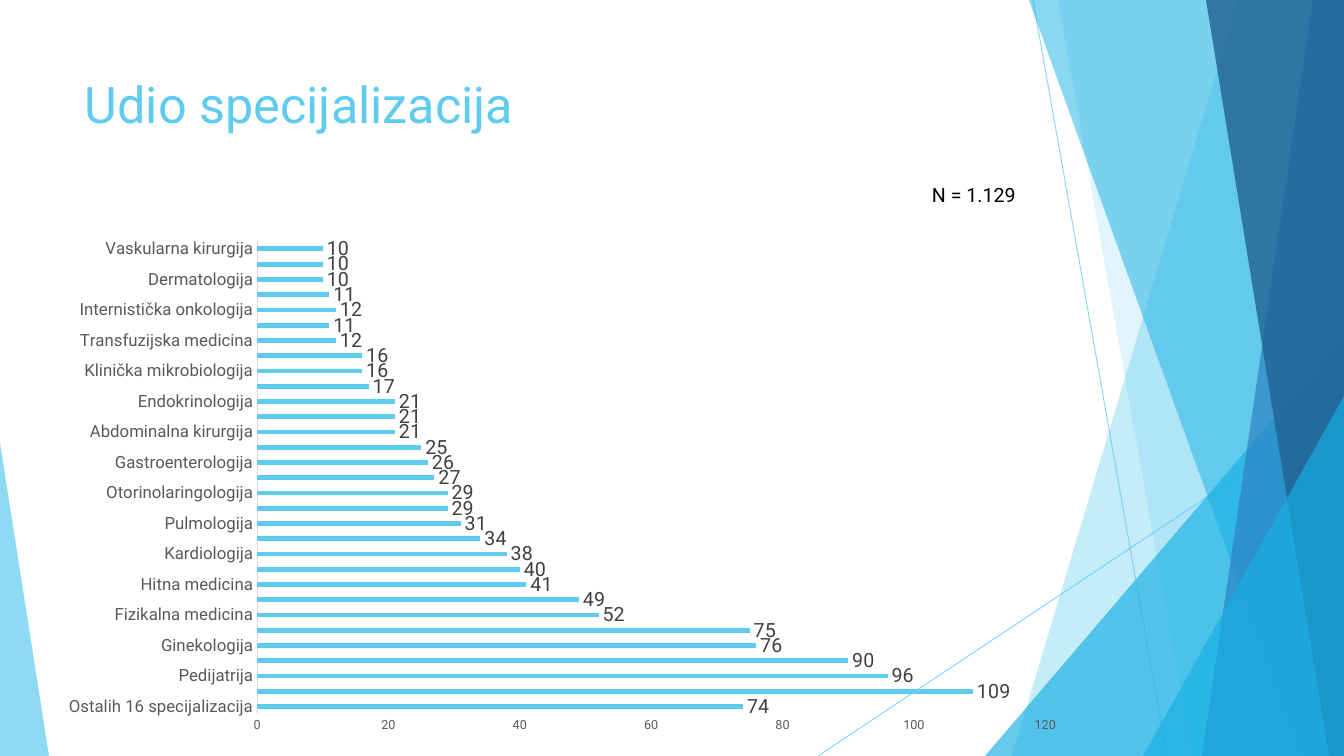
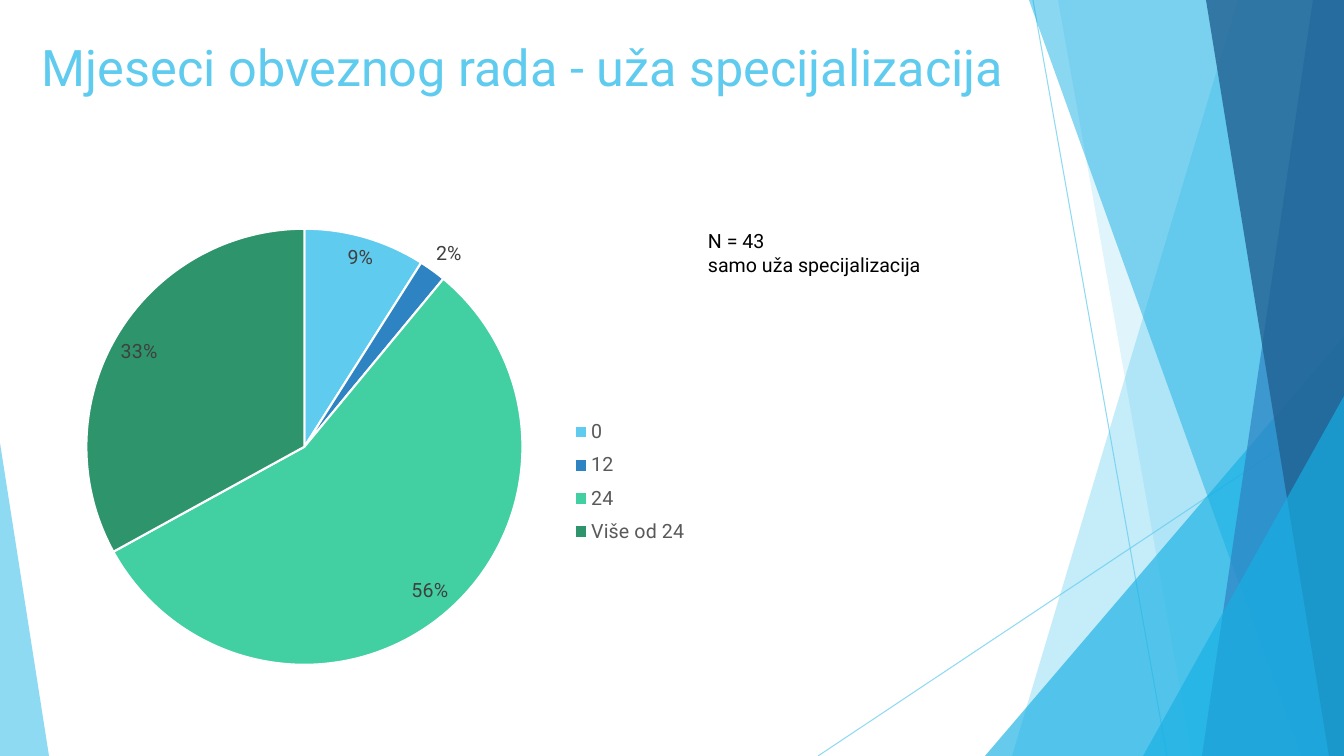
from dataclasses import dataclass
from typing import NamedTuple

from lxml.etree import SubElement
from pptx import Presentation
from pptx.chart.data import CategoryChartData
from pptx.dml.color import RGBColor
from pptx.enum.chart import XL_CHART_TYPE as ChartType
from pptx.enum.chart import XL_LABEL_POSITION as LabelPosition
from pptx.enum.chart import XL_LEGEND_POSITION as LegendPosition
from pptx.enum.chart import XL_TICK_MARK as TickMark
from pptx.enum.shapes import MSO_CONNECTOR as Connector
from pptx.enum.shapes import MSO_SHAPE as Preset
from pptx.enum.text import MSO_AUTO_SIZE as AutoSize
from pptx.oxml.ns import qn
from pptx.util import Emu, Pt


@dataclass(frozen=True)
class Theme:
    font: str = "Roboto"
    sky: str = "5FCBEF"
    cyan: str = "17B0E4"
    blue: str = "2E83C3"
    navy: str = "226292"
    mint: str = "42D0A2"
    green: str = "2E946B"
    white: str = "FFFFFF"
    black: str = "000000"
    label: str = "404040"
    axis: str = "595959"
    axis_line: str = "D9D9D9"
    title_size: int = 36
    body_size: int = 14
    category_size: int = 12
    chart_size: int = 10
    value_size: int = 9


class Box(NamedTuple):
    left: int
    top: int
    width: int
    height: int


THEME = Theme()
SLIDE_BOX = Box(0, 0, 1344, 756)

SPECIALTIES = [
    ("Ostalih 16 specijalizacija", 74), ("Anesteziologija", 109),
    ("Pedijatrija", 96), ("Radiologija", 90), ("Ginekologija", 76),
    ("Obiteljska medicina", 75), ("Fizikalna medicina", 52),
    ("Psihijatrija", 49), ("Hitna medicina", 41), ("Neurologija", 40),
    ("Kardiologija", 38), ("Interna medicina", 34), ("Pulmologija", 31),
    ("Ortopedija", 29), ("Otorinolaringologija", 29),
    ("Patologija i citologija", 27), ("Gastroenterologija", 26),
    ("Oftalmologija", 25), ("Abdominalna kirurgija", 21),
    ("Infektologija", 21), ("Endokrinologija", 21),
    ("Medicina rada i športa", 17), ("Klinička mikrobiologija", 16),
    ("Opća kirurgija", 16), ("Transfuzijska medicina", 12),
    ("Dječja kirurgija", 11), ("Internistička onkologija", 12),
    ("Urologija", 11), ("Dermatologija", 10), ("Nefrologija", 10),
    ("Vaskularna kirurgija", 10),
]
WORK_MONTHS = [
    ("0", 9, THEME.sky), ("12", 2, THEME.blue),
    ("24", 56, THEME.mint), ("Više od 24", 33, THEME.green),
]


def px(length):
    return Emu(round(length * 63500 / 7))


def emu_box(box):
    return [px(length) for length in box]


def rgb(color):
    return RGBColor.from_string(color)


def set_font(font, size, color):
    font.name = THEME.font
    font.size = Pt(size)
    font.color.rgb = rgb(color)


def set_opacity(shape, percent):
    for color in shape.element.spPr.iter(qn("a:srgbClr")):
        SubElement(color, qn("a:alpha"), val=str(percent * 1000))


def paint(shape, color, opacity):
    """Give a borderless, translucent fill."""
    shape.shadow.inherit = False
    shape.fill.solid()
    shape.fill.fore_color.rgb = rgb(color)
    shape.line.fill.background()
    set_opacity(shape, opacity)


def add_ray(slide, box, start, end):
    points = [px(length) for x, y in (start, end)
              for length in (box.left + x, box.top + y)]
    ray = slide.shapes.add_connector(Connector.STRAIGHT, *points)
    ray.line.color.rgb = rgb(THEME.sky)
    ray.line.width = Pt(0.75)
    set_opacity(ray, 70)
    SubElement(ray.element.spPr, qn("a:effectLst"))


def add_ribbon(slide, box, top_x, bottom_x, color, opacity):
    """Fill from a slanted left edge to the right side of the box."""
    right, bottom = box.left + box.width, box.top + box.height
    builder = slide.shapes.build_freeform(
        px(box.left + top_x), px(box.top), scale=1.0)
    corners = [(right, box.top), (right, bottom), (box.left + bottom_x, bottom)]
    builder.add_line_segments([(px(x), px(y)) for x, y in corners], close=True)
    paint(builder.convert_to_shape(), color, opacity)


def add_triangle(slide, box, area, apex, color, opacity):
    placed = Box(box.left + area.left, box.top + area.top, area.width, area.height)
    triangle = slide.shapes.add_shape(Preset.ISOSCELES_TRIANGLE, *emu_box(placed))
    triangle.adjustments[0] = apex
    paint(triangle, color, opacity)


def add_backdrop(slide, box):
    add_ray(slide, box, (1033, 0), (1167, 756))
    add_ray(slide, box, (1344, 406), (818, 756))
    add_ribbon(slide, box, 1238, 1012, THEME.sky, 36)
    add_ribbon(slide, box, 1058, 1192, THEME.sky, 20)
    add_triangle(slide, box, Box(985, 336, 359, 420), 1, THEME.cyan, 66)
    add_ribbon(slide, box, 1029, 1301, THEME.cyan, 50)
    add_ribbon(slide, box, 1313, 1202, THEME.blue, 70)
    add_ribbon(slide, box, 1206, 1329, THEME.navy, 80)
    add_triangle(slide, box, Box(1143, 396, 201, 360), 1, THEME.cyan, 66)
    add_triangle(slide, box, Box(0, 443, 49, 313), 0, THEME.sky, 70)


def add_text(slide, box, lines, size, color):
    frame = slide.shapes.add_textbox(*emu_box(box)).text_frame
    frame.word_wrap = True
    for index, line in enumerate(lines):
        paragraph = frame.add_paragraph() if index else frame.paragraphs[0]
        run = paragraph.add_run()
        run.text = line
        set_font(run.font, size, color)
    return frame


def add_title(slide, box, title):
    add_text(slide, box, [title], THEME.title_size, THEME.sky)


def add_note(slide, box, lines):
    frame = add_text(slide, box, lines, THEME.body_size, THEME.black)
    frame.auto_size = AutoSize.SHAPE_TO_FIT_TEXT


def set_layout(parent, index, fractions, inner=False):
    """Place a chart part by x, y, w and h as fractions of the chart."""
    for old in parent.findall(qn("c:layout")):
        parent.remove(old)
    layout = SubElement(parent, qn("c:layout"))
    parent.insert(index, layout)
    manual = SubElement(layout, qn("c:manualLayout"))
    settings = [("layoutTarget", "inner")] if inner else []
    settings += [("xMode", "edge"), ("yMode", "edge"), *zip("xywh", fractions)]
    for name, value in settings:
        SubElement(manual, qn(f"c:{name}"), val=str(value))


def add_chart(slide, box, kind, categories, values, plot_layout):
    """Add a one-series chart without title, legend or background."""
    data = CategoryChartData()
    data.categories = categories
    data.add_series("Series 1", values)
    chart = slide.shapes.add_chart(kind, *emu_box(box), data).chart
    chart.has_title = False
    chart.has_legend = False
    set_font(chart.font, THEME.chart_size, THEME.black)
    plot_area = chart.element.find(f".//{qn('c:plotArea')}")
    set_layout(plot_area, 0, plot_layout, inner=True)
    SubElement(SubElement(plot_area, qn("c:spPr")), qn("a:noFill"))
    background = SubElement(chart.element, qn("c:spPr"))
    SubElement(background, qn("a:noFill"))
    SubElement(SubElement(background, qn("a:ln")), qn("a:noFill"))
    chart.element.find(qn("c:chart")).addnext(background)
    return chart


def add_labels(plot, position):
    plot.has_data_labels = True
    labels = plot.data_labels
    labels.position = position
    set_font(labels.font, THEME.body_size, THEME.label)
    return labels


def style_axis(axis, size):
    axis.has_major_gridlines = False
    axis.major_tick_mark = axis.minor_tick_mark = TickMark.NONE
    set_font(axis.tick_labels.font, size, THEME.axis)


def add_specialty_bars(slide, box):
    categories, values = zip(*SPECIALTIES)
    chart = add_chart(slide, box, ChartType.BAR_CLUSTERED, categories, values,
                      (0.216, 0.135, 0.712, 0.795))
    plot = chart.plots[0]
    plot.gap_width = 219
    plot.vary_by_categories = False
    fill = plot.series[0].format.fill
    fill.solid()
    fill.fore_color.rgb = rgb(THEME.sky)
    add_labels(plot, LabelPosition.OUTSIDE_END).show_value = True
    style_axis(chart.category_axis, THEME.category_size)
    line = chart.category_axis.format.line
    line.color.rgb = rgb(THEME.axis_line)
    line.width = Pt(0.75)
    style_axis(chart.value_axis, THEME.value_size)
    chart.value_axis.format.line.fill.background()


def add_months_pie(slide, box):
    categories, values, colors = zip(*WORK_MONTHS)
    chart = add_chart(slide, box, ChartType.PIE, categories, values,
                      (0.092, 0.046, 0.63, 0.92))
    plot = chart.plots[0]
    plot.vary_by_categories = True
    for index, color in enumerate(colors):
        slice_format = plot.series[0].points[index].format
        slice_format.fill.solid()
        slice_format.fill.fore_color.rgb = rgb(color)
        slice_format.line.color.rgb = rgb(THEME.white)
        slice_format.line.width = Pt(1.5)
    labels = add_labels(plot, LabelPosition.BEST_FIT)
    labels.show_value = False
    labels.show_percentage = True
    labels.number_format = "0%"
    labels.number_format_is_linked = False
    chart.has_legend = True
    chart.legend.position = LegendPosition.RIGHT
    chart.legend.include_in_layout = False
    set_font(chart.legend.font, THEME.body_size, THEME.axis)
    legend = chart.element.find(f".//{qn('c:legend')}")
    set_layout(legend, 1, (0.786, 0.43, 0.18, 0.3))


def add_slide(presentation):
    slide = presentation.slides.add_slide(presentation.slide_layouts[6])
    add_backdrop(slide, SLIDE_BOX)
    return slide


def add_specialty_slide(presentation):
    slide = add_slide(presentation)
    add_title(slide, Box(75, 68, 948, 145), "Udio specijalizacija")
    add_note(slide, Box(922, 178, 151, 34), ["N = 1.129"])
    add_specialty_bars(slide, Box(18, 161, 1107, 595))


def add_months_slide(presentation):
    slide = add_slide(presentation)
    add_title(slide, Box(32, 31, 1096, 145),
              "Mjeseci obveznog rada - uža specijalizacija")
    add_note(slide, Box(698, 224, 368, 57), ["N = 43", "samo uža specijalizacija"])
    add_months_pie(slide, Box(22, 207, 694, 474))


def main():
    presentation = Presentation()
    presentation.slide_width = px(SLIDE_BOX.width)
    presentation.slide_height = px(SLIDE_BOX.height)
    add_specialty_slide(presentation)
    add_months_slide(presentation)
    presentation.save("out.pptx")


if __name__ == "__main__":
    main()
